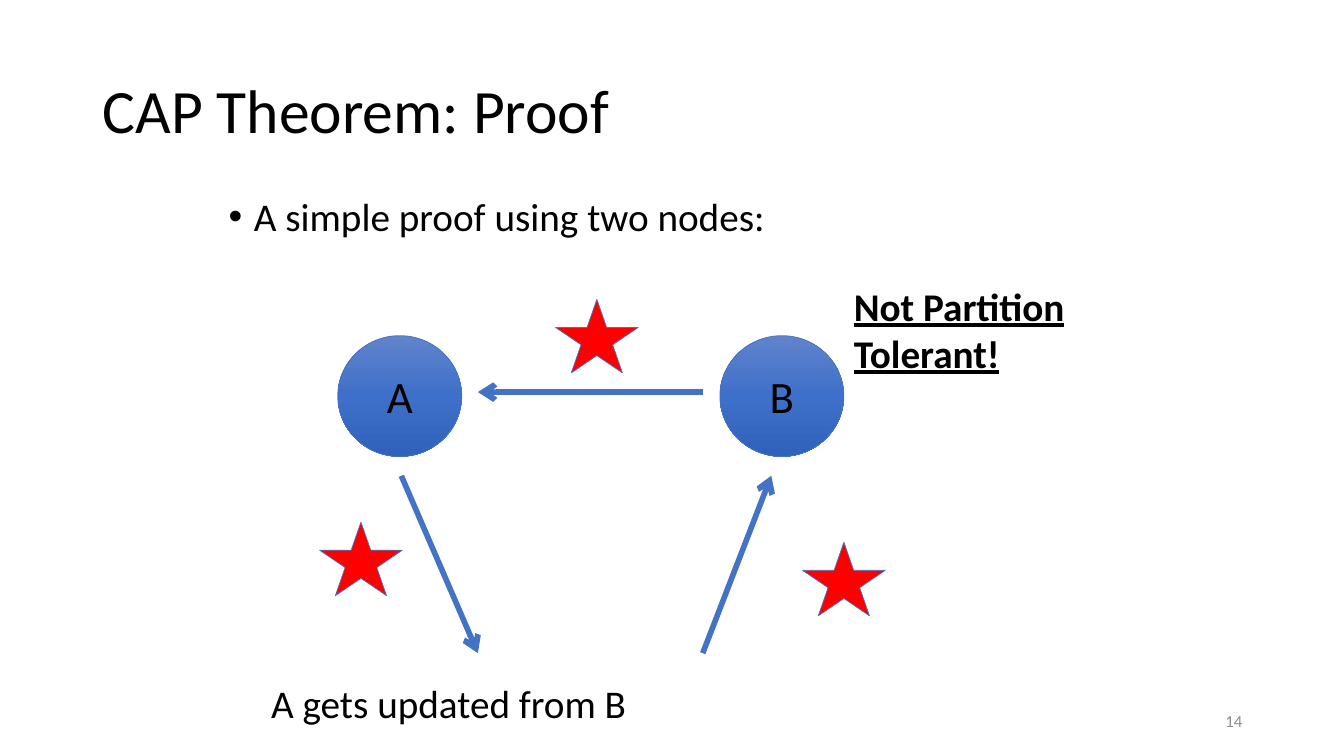
from copy import deepcopy
from typing import NamedTuple

from pptx import Presentation
from pptx.dml.color import RGBColor
from pptx.enum.shapes import MSO_CONNECTOR as Connector, MSO_SHAPE as Preset
from pptx.enum.text import MSO_ANCHOR as Anchor, PP_ALIGN as Align
from pptx.oxml.ns import qn
from pptx.shapes.autoshape import Shape
from pptx.slide import Slide
from pptx.util import Inches, Pt

FONT = "Calibri"
COLORS = {
    "text": "000000",
    "number": "8C8C8C",
    "accent": "4472C4",
    "failure": "FF0000",
}
NODE_GRADIENT = ((0, "6183CB"), (0.5, "3E70CA"), (1, "3062BB"))
NODE_SIZE = (1.23, 1.2)
STAR_SIZE = (0.82, 0.73)


class Node(NamedTuple):
    label: str
    left: float
    top: float = 3.33


class Message(NamedTuple):
    start: tuple[float, float]
    end: tuple[float, float]


class Failure(NamedTuple):
    left: float
    top: float


NODES = [Node("A", 3.35), Node("B", 7.14)]
MESSAGES = [
    Message((6.97, 6.48), (7.65, 4.72)),
    Message((3.98, 4.72), (4.74, 6.48)),
    Message((6.97, 3.89), (4.74, 3.89)),
]
FAILURES = [Failure(7.96, 5.38), Failure(3.17, 5.18), Failure(5.51, 2.97)]


def write(shape: Shape, text: str, *, size: float = 28, color: str = "text",
          bold: bool = False, underline: bool = False,
          align: Align = Align.LEFT, anchor: Anchor = Anchor.TOP,
          spacing: float = 1, before: float = 0, bullet: str = "") -> None:
    """Put one formatted paragraph into a shape."""
    frame = shape.text_frame
    frame.word_wrap = True
    frame.vertical_anchor = anchor
    paragraph = frame.paragraphs[0]
    paragraph.alignment = align
    paragraph.line_spacing = spacing
    paragraph.space_before = Pt(before)
    if bullet:
        properties = paragraph._p.get_or_add_pPr()
        properties.set("marL", str(Inches(0.25)))
        properties.set("indent", str(-Inches(0.25)))
        marker = properties.makeelement(qn("a:buFont"), {"typeface": "Arial"})
        properties.append(marker)
        properties.append(properties.makeelement(qn("a:buChar"), {"char": bullet}))
    run = paragraph.add_run()
    run.text = text
    run.font.name = FONT
    run.font.size = Pt(size)
    run.font.bold = bold
    run.font.underline = underline
    run.font.color.rgb = RGBColor.from_string(COLORS[color])


def add_text(slide: Slide, box: tuple[float, ...], text: str, **style) -> None:
    write(slide.shapes.add_textbox(*map(Inches, box)), text, **style)


def add_outlined(slide: Slide, preset: Preset, left: float, top: float,
                 size: tuple[float, float]) -> Shape:
    shape = slide.shapes.add_shape(preset, *map(Inches, (left, top, *size)))
    shape.shadow.inherit = False
    shape.line.color.rgb = RGBColor.from_string(COLORS["accent"])
    shape.line.width = Pt(0.5)
    return shape


def add_node(slide: Slide, node: Node) -> None:
    circle = add_outlined(slide, Preset.OVAL, node.left, node.top, NODE_SIZE)
    circle.fill.gradient()
    circle.fill.gradient_angle = 270
    # A new gradient has two stops; this one needs a third
    stop_list = circle._element.spPr.find(qn("a:gradFill")).find(qn("a:gsLst"))
    stop_list.append(deepcopy(stop_list[0]))
    for stop, (position, color) in zip(circle.fill.gradient_stops, NODE_GRADIENT):
        stop.position = position
        stop.color.rgb = RGBColor.from_string(color)
    write(circle, node.label, size=32, align=Align.CENTER, anchor=Anchor.MIDDLE)


def add_message(slide: Slide, message: Message) -> None:
    arrow = slide.shapes.add_connector(
        Connector.STRAIGHT, *map(Inches, (*message.start, *message.end)))
    arrow.line.color.rgb = RGBColor.from_string(COLORS["accent"])
    arrow.line.width = Pt(4)
    outline = arrow.line._get_or_add_ln()
    outline.append(outline.makeelement(qn("a:tailEnd"), {"type": "arrow"}))
    properties = arrow._element.spPr
    properties.append(properties.makeelement(qn("a:effectLst"), {}))


def add_failure(slide: Slide, failure: Failure) -> None:
    star = add_outlined(slide, Preset.STAR_5_POINT, *failure, STAR_SIZE)
    star.fill.solid()
    star.fill.fore_color.rgb = RGBColor.from_string(COLORS["failure"])


def main() -> None:
    deck = Presentation()
    deck.slide_width, deck.slide_height = Inches(13.33), Inches(7.5)
    slide = deck.slides.add_slide(deck.slide_layouts[6])

    # Heading and introduction
    add_text(slide, (0.92, 0.4, 11.5, 1.45), "CAP Theorem: Proof",
             size=44, anchor=Anchor.MIDDLE, spacing=0.9)
    add_text(slide, (2.17, 1.91, 8.04, 0.91), "A simple proof using two nodes:",
             spacing=0.9, before=10, bullet="•")

    # Nodes, the messages between them, and the failed links
    for node in NODES:
        add_node(slide, node)
    for message in MESSAGES:
        add_message(slide, message)
    for failure in FAILURES:
        add_failure(slide, failure)

    # Conclusion, caption and slide number
    add_text(slide, (8.37, 2.75, 3.08, 1.04), "Not Partition Tolerant!",
             bold=True, underline=True)
    add_text(slide, (2.59, 6.69, 3.98, 0.57), "A gets updated from B")
    add_text(slide, (9.42, 6.95, 3, 0.4), "14", size=12, color="number",
             align=Align.RIGHT, anchor=Anchor.MIDDLE)

    deck.save("out.pptx")


if __name__ == "__main__":
    main()
